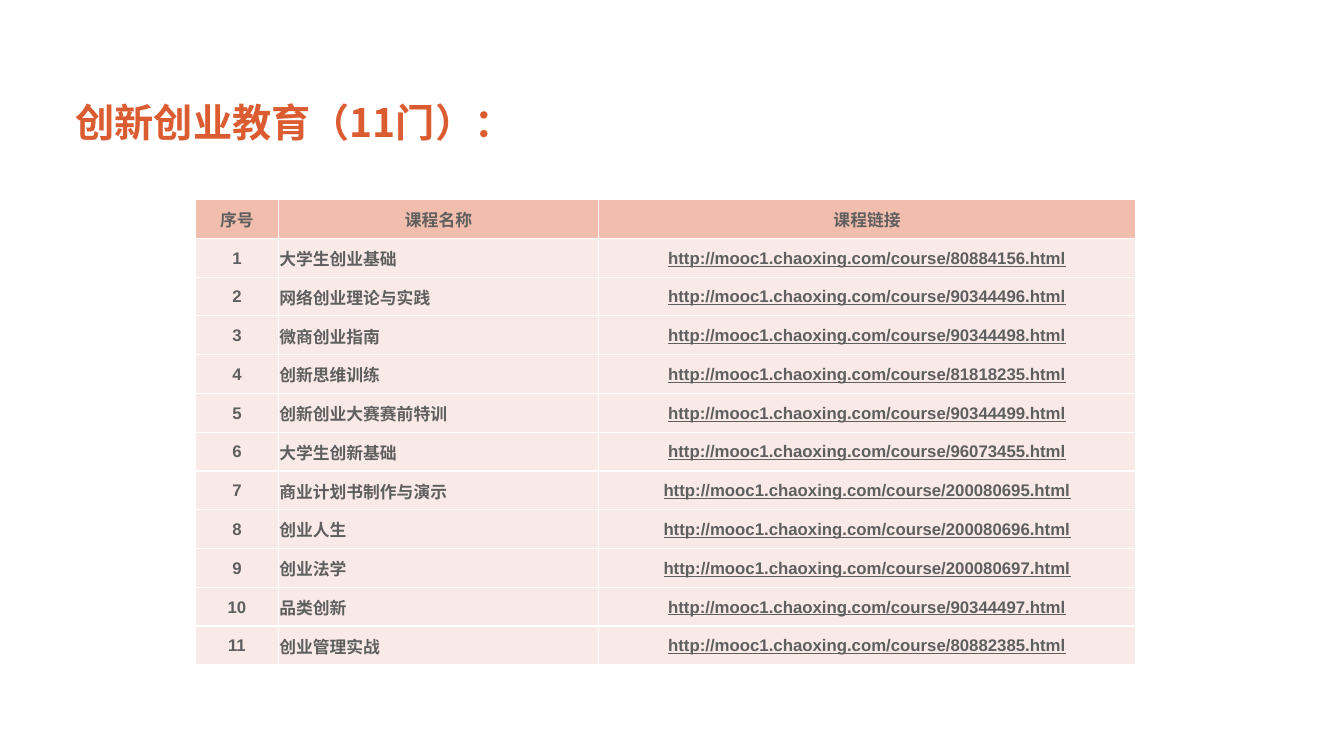
from lxml import etree
from pptx import Presentation
from pptx.dml.color import RGBColor
from pptx.enum.text import MSO_ANCHOR, PP_ALIGN
from pptx.oxml.ns import qn
from pptx.util import Inches, Pt

LEFT, CENTER = PP_ALIGN.LEFT, PP_ALIGN.CENTER
MIDDLE, BOTTOM = MSO_ANCHOR.MIDDLE, MSO_ANCHOR.BOTTOM

COLORS = {
    "title": "DC5C31",
    "text": "5F5F5F",
    "head": "F1BEAD",
    "body": "F9EAE8",
    "rule": "FFFFFF",
}
LATIN, HAN = "Arial", "Noto Sans CJK SC"

HEADS = ("序号", "课程名称", "课程链接")
WIDTHS = (0.82, 3.18, 5.32)
ROW_HEIGHT = 0.385
LINK = "http://mooc1.chaoxing.com/course/{}.html"
COURSES = (
    ("大学生创业基础", 80884156),
    ("网络创业理论与实践", 90344496),
    ("微商创业指南", 90344498),
    ("创新思维训练", 81818235),
    ("创新创业大赛赛前特训", 90344499),
    ("大学生创新基础", 96073455),
    ("商业计划书制作与演示", 200080695),
    ("创业人生", 200080696),
    ("创业法学", 200080697),
    ("品类创新", 90344497),
    ("创业管理实战", 80882385),
)


def add_run(para, text, size, color, font, underline=False):
    run = para.add_run()
    run.text = text
    run.font.size = Pt(size)
    run.font.bold = True
    run.font.underline = underline
    run.font.color.rgb = RGBColor.from_string(COLORS[color])
    run.font.name = font
    # East Asian typeface
    etree.SubElement(run.font._element, qn("a:ea"), typeface=HAN)


def add_title(slide, text):
    title = slide.shapes.title
    title.left, title.top = Inches(0.65), Inches(0.73)
    title.width, title.height = Inches(11.9), Inches(0.77)
    title.text_frame.vertical_anchor = BOTTOM
    para = title.text_frame.paragraphs[0]
    para.alignment = LEFT
    para.line_spacing = 0.9
    add_run(para, text, 28, "title", HAN)


def set_borders(cell):
    props = cell._tc.get_or_add_tcPr()
    for side in ("lnL", "lnR", "lnT", "lnB"):
        line = etree.SubElement(props, qn(f"a:{side}"), w=str(Pt(1)))
        fill = etree.SubElement(line, qn("a:solidFill"))
        etree.SubElement(fill, qn("a:srgbClr"), val=COLORS["rule"])


def fill_cell(cell, text, fill, align, underline):
    set_borders(cell)
    cell.fill.solid()
    cell.fill.fore_color.rgb = RGBColor.from_string(COLORS[fill])
    cell.vertical_anchor = MIDDLE
    cell.margin_left = cell.margin_right = cell.margin_top = Inches(0.01)
    cell.margin_bottom = 0
    para = cell.text_frame.paragraphs[0]
    para.alignment = align
    add_run(para, text, 12, "text", LATIN, underline)


def add_courses(slide):
    rows = [HEADS]
    for number, (name, code) in enumerate(COURSES, 1):
        rows.append((str(number), name, LINK.format(code)))
    frame = slide.shapes.add_table(
        len(rows), len(HEADS), Inches(1.94), Inches(1.98),
        Inches(sum(WIDTHS)), Inches(ROW_HEIGHT * len(rows)))
    table = frame.table
    for col, width in zip(table.columns, WIDTHS):
        col.width = Inches(width)
    for r, row in enumerate(rows):
        table.rows[r].height = Inches(ROW_HEIGHT)
        for c, text in enumerate(row):
            fill = "body" if r else "head"
            align = LEFT if r and c == 1 else CENTER
            fill_cell(table.cell(r, c), text, fill, align, r > 0 and c == 2)


def main():
    deck = Presentation()
    deck.slide_width, deck.slide_height = Inches(13.33), Inches(7.5)
    # Title-only layout
    slide = deck.slides.add_slide(deck.slide_layouts[5])
    add_title(slide, "创新创业教育（11门）：")
    add_courses(slide)
    deck.save("out.pptx")


if __name__ == "__main__":
    main()
